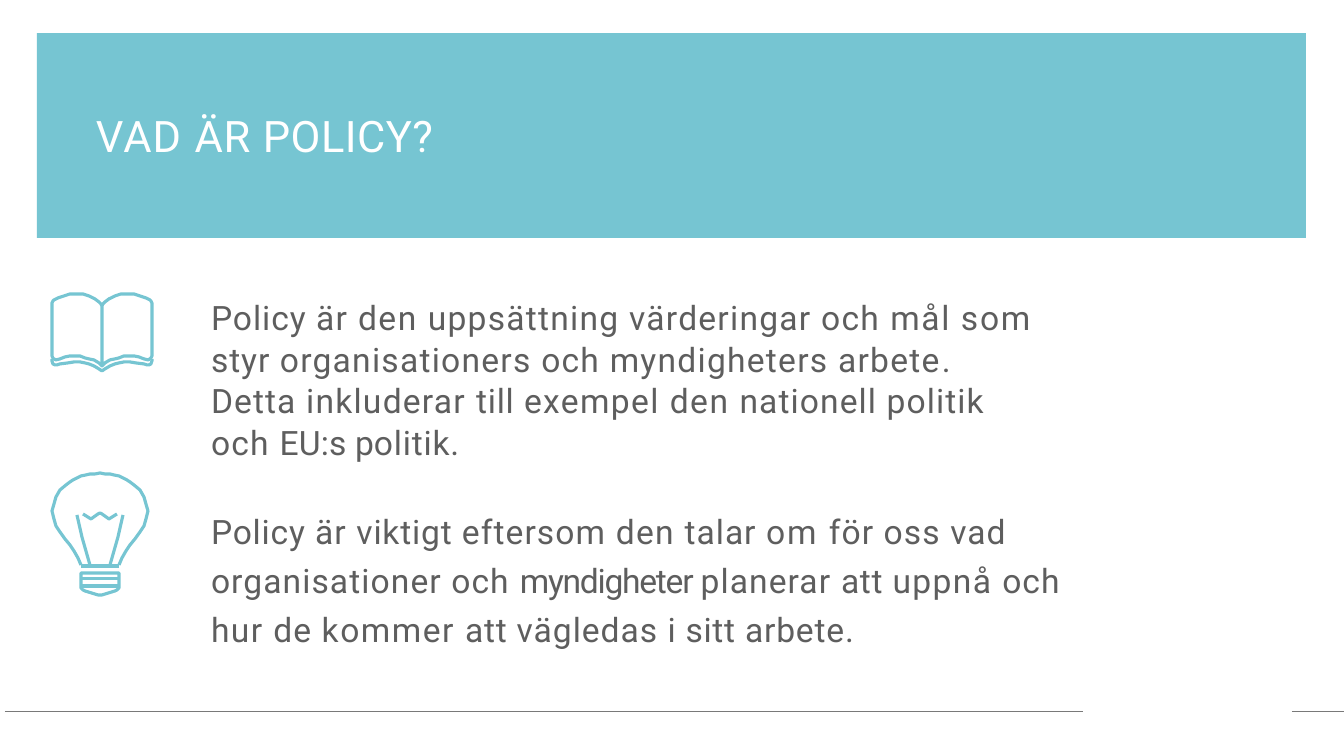
from dataclasses import dataclass

from lxml import etree
from pptx import Presentation
from pptx.dml.color import RGBColor
from pptx.enum.shapes import MSO_CONNECTOR
from pptx.enum.text import MSO_ANCHOR, MSO_AUTO_SIZE, PP_ALIGN
from pptx.oxml.ns import qn
from pptx.util import Pt

PX = 914400 / 100.8
LINE = MSO_CONNECTOR.STRAIGHT
TOP = MSO_ANCHOR.TOP
LEFT = PP_ALIGN.LEFT
FIXED = MSO_AUTO_SIZE.NONE


@dataclass(frozen=True)
class Theme:
    """Colours, font and sizes of the slide."""
    teal: RGBColor = RGBColor.from_string("76C5D2")
    white: RGBColor = RGBColor.from_string("FFFFFF")
    ink: RGBColor = RGBColor.from_string("5E5E5E")
    rule: RGBColor = RGBColor.from_string("797979")
    font: str = "Roboto"
    head: float = 31
    body: float = 24
    stroke: float = 2.25
    thin: float = 0.5


THEME = Theme()

TITLE = [("VAD ", 90), ("ÄR ", 60), ("POLICY?", 40)]

MEANING = [
    ("Policy ", 70), ("är ", 90), ("den ", 110),
    ("uppsättning värderingar och ", 90), ("mål ", 110), ("som ", 130),
    ("styr ", 70), ("organisationers och myndigheters arbete", 90),
    (". ", 70), ("Detta ", 80), ("inkluderar ", 90), ("till ", 60),
    ("exempel ", 100), ("den ", 110), ("nationell politik ", 80),
    ("och ", 90), ("EU:s ", 10), ("p", -110), ("olitik.", 60),
]

VALUE = [
    ("Policy ", 60), ("är ", 80), ("viktigt ", 60), ("eftersom ", 80),
    ("den ", 90), ("talar ", 70), ("om ", 140), ("för oss ", 80),
    ("vad ", 70), ("organisationer och ", 80), ("myndigheter ", -90),
    ("planerar ", 80), ("att ", 50), ("uppnå ", 100), ("och ", 80),
    ("hur ", 100), ("de ", 80), ("kommer ", 110), ("att ", 50),
    ("vägledas ", 70), ("i sitt ", 50), ("arbete.", 60),
]

BOOK = [
    [(0, 65), (0, 67), (1, 70), (3, 71), (5, 71), (8, 70), (16, 69),
     (22, 68), (28, 68), (33, 69), (37, 70), (42, 72), (47, 75), (50, 77)],
    [(50, 12), (50, 72), (47, 69), (42, 66), (37, 65), (33, 64), (28, 62),
     (18, 62), (13, 63), (8, 65), (4, 66), (2, 65), (1, 64), (0, 62),
     (0, 9), (1, 7), (2, 6), (6, 4), (12, 2), (18, 0), (31, 0), (37, 2),
     (43, 5), (47, 8), (49, 10), (50, 12)],
]

BULB = [
    [(29, 92), (26, 85), (22, 78), (18, 72), (13, 66), (8, 59), (4, 53),
     (2, 46), (0, 38), (2, 31), (4, 24), (8, 17), (14, 12), (18, 9),
     (21, 7), (25, 5), (29, 3), (34, 2), (38, 1), (43, 1), (48, 0)],
    [(38, 92), (30, 64), (25, 42)],
    [(31, 41), (39, 46), (46, 41), (48, 40)],
    [(29, 93), (48, 93)],
    [(29, 106), (48, 106)],
    [(29, 113), (48, 113)],
    [(48, 100), (29, 100), (29, 115), (31, 117), (33, 118), (46, 122),
     (48, 122)],
]


def emu(*vals):
    """Turn px lengths into EMU."""
    return [round(val * PX) for val in vals]


def write(para, parts, size, color):
    """Fill a paragraph with runs, each with its letter spacing."""
    para.alignment = LEFT
    for text, gap in parts:
        run = para.add_run()
        run.text = text
        run.font.name = THEME.font
        run.font.size = Pt(size)
        run.font.color.rgb = color
        run.font._element.set("spc", str(gap))


def setup(frame, left=0, top=0):
    """Give a text frame its insets, wrapping and top anchor."""
    frame.word_wrap = True
    frame.auto_size = FIXED
    frame.vertical_anchor = TOP
    frame.margin_left, frame.margin_top = emu(left, top)
    frame.margin_right = frame.margin_bottom = 0


def banner(slide, box):
    """Place the title on its teal band."""
    title = slide.shapes.title
    title.left, title.top, title.width, title.height = emu(*box)
    title.fill.solid()
    title.fill.fore_color.rgb = THEME.teal
    setup(title.text_frame, left=59, top=76)
    write(title.text_frame.paragraphs[0], TITLE, THEME.head, THEME.white)


def prose(slide, box):
    """Place the two body paragraphs."""
    frame = slide.shapes.add_textbox(*emu(*box)).text_frame
    setup(frame, left=1)
    first, last = frame.paragraphs[0], frame.add_paragraph()
    last.space_before = Pt(28.5)
    for para, parts, space, inset in (
        (first, MEANING, 1.03, 89), (last, VALUE, 1.22, 40)
    ):
        para.line_spacing = space
        para._p.get_or_add_pPr().set("marR", str(emu(inset)[0]))
        write(para, parts, THEME.body, THEME.ink)


def icon(slide, box, halves):
    """Draw an outline icon from left halves mirrored about its middle."""
    left, top, width = box
    lines = []
    for half in halves:
        twin = [(width - x, y) for x, y in reversed(half)]
        if half[-1][0] * 2 == width:
            lines.append(half + twin[1:])
        else:
            lines += [half, twin]
    pen = slide.shapes.build_freeform(*lines[0][0], scale=PX)
    for line in lines:
        pen.move_to(*line[0])
        pen.add_line_segments(line[1:], close=line[0] == line[-1])
    shape = pen.convert_to_shape(*emu(left, top))
    shape.shadow.inherit = False
    shape.fill.background()
    shape.line.color.rgb = THEME.teal
    shape.line.width = Pt(THEME.stroke)


def footer(slide, box, gap):
    """Draw the bottom rule in two parts around a gap."""
    left, top, width = box
    for start, end in ((left, gap[0]), (gap[1], left + width)):
        rule = slide.shapes.add_connector(LINE, *emu(start, top, end, top))
        rule.line.color.rgb = THEME.rule
        rule.line.width = Pt(THEME.thin)
        etree.SubElement(rule._element.spPr, qn("a:effectLst"))


def main():
    """Build and save the slide."""
    deck = Presentation()
    deck.slide_width, deck.slide_height = emu(1344, 756)
    slide = deck.slides.add_slide(deck.slide_layouts[5])
    footer(slide, (5, 711, 1339), (1083, 1292))
    icon(slide, (52, 294, 100), BOOK)
    icon(slide, (52, 473, 96), BULB)
    banner(slide, (37, 33, 1269, 205))
    prose(slide, (210, 296, 915, 356))
    deck.save("out.pptx")


if __name__ == "__main__":
    main()
